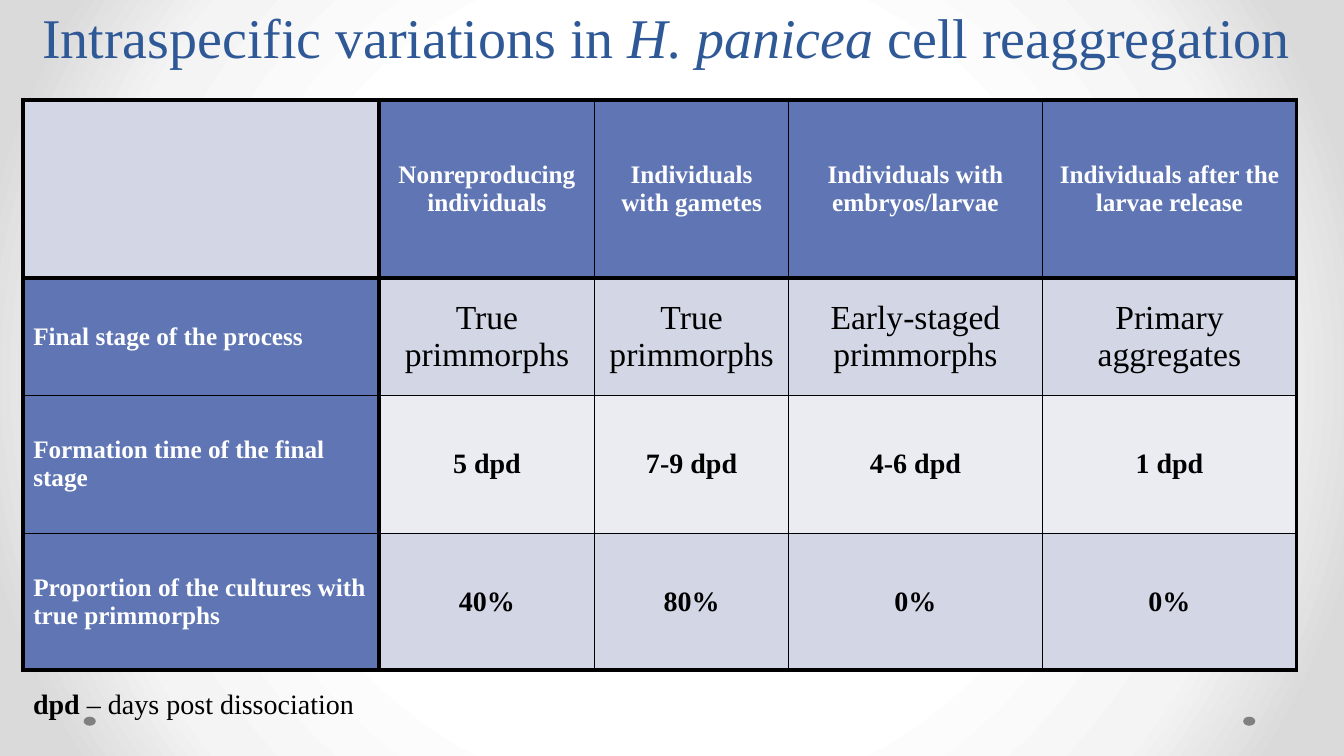
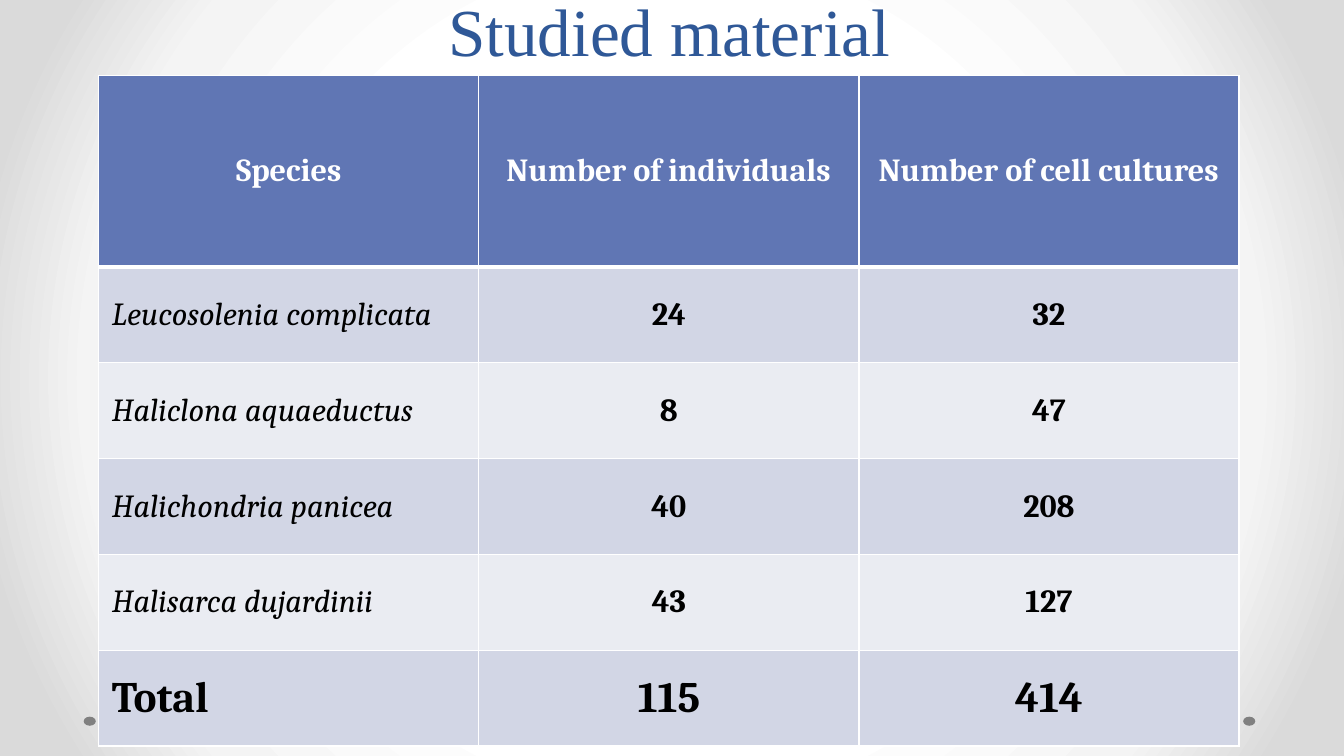
"""Build two slides on sponge cell reaggregation, each with a title and a table."""
from dataclasses import dataclass

from lxml import etree
from pptx import Presentation
from pptx import util as u
from pptx.dml.color import RGBColor
from pptx.enum import shapes, text
from pptx.oxml import ns, parse_xml

COLORS = {
    "title": "2F5897", "header": "6076B4", "band": "D2D6E5", "band_light": "EAECF2",
    "dot": "808080", "black": "000000", "white": "FFFFFF",
}
BACKGROUND_STOPS = ((50, "FFFFFF"), (76, "F4F4F4"), (92, "DADADA"))
TITLE_FONT = "Times New Roman"
DOT_LEFTS = (12.33, 0.83)
CENTER = text.PP_ALIGN.CENTER
LEFT = text.PP_ALIGN.LEFT


@dataclass(frozen=True)
class Style:
    size: float
    font: str = TITLE_FONT
    color: str = "black"
    bold: bool = False
    italic: bool = False


@dataclass(frozen=True)
class Box:
    left: float
    top: float
    width: float
    height: float


@dataclass(frozen=True)
class Run:
    words: str
    style: Style


@dataclass(frozen=True)
class Row:
    height: float
    cells: tuple[str, ...]
    label: Style
    values: Style
    label_align: text.PP_ALIGN = LEFT


@dataclass(frozen=True)
class TableDesign:
    left: float
    top: float
    widths: tuple[float, ...]
    rows: tuple[Row, ...]
    border: str
    thick_rows: tuple[int, ...]
    thick_columns: tuple[int, ...] = ()
    label_column: bool = False
    inset: tuple[float, float] = (0.1, 0.05)


HEADING = Style(18, color="white", bold=True)
STAGE = Style(24)
FIGURE = Style(20, bold=True)
REAGGREGATION = TableDesign(
    0.23, 0.99, (3.53, 2.14, 1.92, 2.52, 2.52),
    (
        Row(1.77, ("", "Nonreproducing individuals", "Individuals with gametes",
                   "Individuals with embryos/larvae",
                   "Individuals after the larvae release"), HEADING, HEADING),
        Row(1.16, ("Final stage of the process", "True primmorphs", "True primmorphs",
                   "Early-staged primmorphs", "Primary aggregates"), HEADING, STAGE),
        Row(1.37, ("Formation time of the final stage", "5 dpd", "7-9 dpd", "4-6 dpd",
                   "1 dpd"), HEADING, FIGURE),
        Row(1.36, ("Proportion of the cultures with true primmorphs", "40%", "80%", "0%",
                   "0%"), HEADING, FIGURE),
    ),
    border="black", thick_rows=(0, 1, 4), thick_columns=(0, 1, 5), label_column=True,
)

SPECIES_HEADING = Style(23, "Cambria", "white", bold=True)
SPECIES = Style(23, "Cambria", italic=True)
COUNT = Style(23, "Cambria", bold=True)
TOTAL = Style(31, "Cambria", bold=True)
SPECIES_COUNTS = (
    ("Leucosolenia complicata", "24", "32"),
    ("Haliclona aquaeductus", "8", "47"),
    ("Halichondria panicea", "40", "208"),
    ("Halisarca dujardinii", "43", "127"),
)
MATERIAL = TableDesign(
    0.98, 0.75, (3.77,) * 3,
    (
        Row(1.9, ("Species", "Number of individuals", "Number of cell cultures"),
            SPECIES_HEADING, SPECIES_HEADING, CENTER),
        *(Row(0.95, counts, SPECIES, COUNT) for counts in SPECIES_COUNTS),
        Row(0.95, ("Total", "115", "414"), TOTAL, TOTAL),
    ),
    border="white", thick_rows=(1,), inset=(0.13, 0.06),
)


def rgb(name: str) -> RGBColor:
    return RGBColor.from_string(COLORS[name])


def add_run(paragraph, run: Run) -> None:
    piece = paragraph.add_run()
    piece.text = run.words
    font, style = piece.font, run.style
    font.name, font.size = style.font, u.Pt(style.size)
    font.bold, font.italic = style.bold, style.italic
    font.color.rgb = rgb(style.color)


def add_text(slide, box: Box, runs: tuple[Run, ...]):
    shape = slide.shapes.add_textbox(u.Inches(box.left), u.Inches(box.top),
                                     u.Inches(box.width), u.Inches(box.height))
    shape.text_frame.word_wrap = True
    paragraph = shape.text_frame.paragraphs[0]
    for run in runs:
        add_run(paragraph, run)
    return shape


def add_title(slide, box: Box, runs: tuple[Run, ...]) -> None:
    frame = add_text(slide, box, runs).text_frame
    frame.vertical_anchor = text.MSO_ANCHOR.BOTTOM
    frame.paragraphs[0].alignment = CENTER
    frame.paragraphs[0].line_spacing = u.Pt(58)


def set_background(master) -> None:
    master.background.fill.solid()
    properties = master.element.find(".//" + ns.qn("p:bgPr"))
    stops = "".join(
        f'<a:gs pos="{position * 1000}"><a:srgbClr val="{color}"/></a:gs>'
        for position, color in BACKGROUND_STOPS)
    gradient = parse_xml(
        f'<a:gradFill {ns.nsdecls("a")} rotWithShape="1"><a:gsLst>{stops}</a:gsLst>'
        '<a:path path="circle"><a:fillToRect l="50000" t="50000" r="50000" b="50000"/>'
        '</a:path></a:gradFill>')
    properties.replace(properties.find(ns.qn("a:solidFill")), gradient)


def add_dots(slide) -> None:
    for left in DOT_LEFTS:
        dot = slide.shapes.add_shape(shapes.MSO_SHAPE.OVAL, u.Inches(left), u.Inches(7.11),
                                     u.Inches(0.12), u.Inches(0.09))
        dot.shadow.inherit = False
        dot.fill.solid()
        dot.fill.fore_color.rgb = rgb("dot")
        dot.line.fill.background()


def set_borders(cell, design: TableDesign, row: int, column: int) -> None:
    sides = (
        ("lnL", column in design.thick_columns),
        ("lnR", column + 1 in design.thick_columns),
        ("lnT", row in design.thick_rows),
        ("lnB", row + 1 in design.thick_rows),
    )
    properties = cell._tc.get_or_add_tcPr()
    for index, (tag, thick) in enumerate(sides):
        line = etree.Element(ns.qn(f"a:{tag}"), w=str(u.Pt(3 if thick else 1)))
        fill = etree.SubElement(line, ns.qn("a:solidFill"))
        etree.SubElement(fill, ns.qn("a:srgbClr"), val=COLORS[design.border])
        properties.insert(index, line)


def cell_fill(design: TableDesign, row: int, column: int) -> str:
    if design.label_column and row == column == 0:
        return "band"
    if row == 0 or (design.label_column and column == 0):
        return "header"
    return "band" if row % 2 else "band_light"


def add_design(slide, design: TableDesign) -> None:
    table = slide.shapes.add_table(
        len(design.rows), len(design.widths), u.Inches(design.left), u.Inches(design.top),
        u.Inches(sum(design.widths)), u.Inches(sum(row.height for row in design.rows))).table
    for column, width in zip(table.columns, design.widths):
        column.width = u.Inches(width)
    for row_index, row in enumerate(design.rows):
        table.rows[row_index].height = u.Inches(row.height)
        for column_index, words in enumerate(row.cells):
            is_label = column_index == 0
            cell = table.cell(row_index, column_index)
            cell.vertical_anchor = text.MSO_ANCHOR.MIDDLE
            cell.margin_left = cell.margin_right = u.Inches(design.inset[0])
            cell.margin_top = cell.margin_bottom = u.Inches(design.inset[1])
            cell.fill.solid()
            cell.fill.fore_color.rgb = rgb(cell_fill(design, row_index, column_index))
            set_borders(cell, design, row_index, column_index)
            paragraph = cell.text_frame.paragraphs[0]
            paragraph.alignment = row.label_align if is_label else CENTER
            if words:
                add_run(paragraph, Run(words, row.label if is_label else row.values))


def add_slide(presentation, title_box: Box, title: tuple[Run, ...], design: TableDesign):
    slide = presentation.slides.add_slide(presentation.slide_layouts[6])
    add_dots(slide)
    add_title(slide, title_box, title)
    add_design(slide, design)
    return slide


def main() -> None:
    presentation = Presentation()
    presentation.slide_width, presentation.slide_height = u.Inches(13.33), u.Inches(7.5)
    set_background(presentation.slide_master)

    upright = Style(40, color="title")
    slanted = Style(40, color="title", italic=True)
    slide = add_slide(
        presentation, Box(-0.12, 0, 13.45, 0.74),
        (Run("Intraspecific variations in ", upright), Run("H. panicea ", slanted),
         Run("cell reaggregation", upright)),
        REAGGREGATION)
    footnote = add_text(slide, Box(0.23, 6.76, 12.64, 0.56),
                        (Run("dpd", FIGURE), Run(" – days post dissociation", Style(20))))
    footnote.text_frame.paragraphs[0].space_before = u.Pt(4)

    add_slide(presentation, Box(2.14, 0, 9, 0.74),
              (Run("Studied material", Style(48, color="title")),), MATERIAL)
    presentation.save("out.pptx")


if __name__ == "__main__":
    main()
